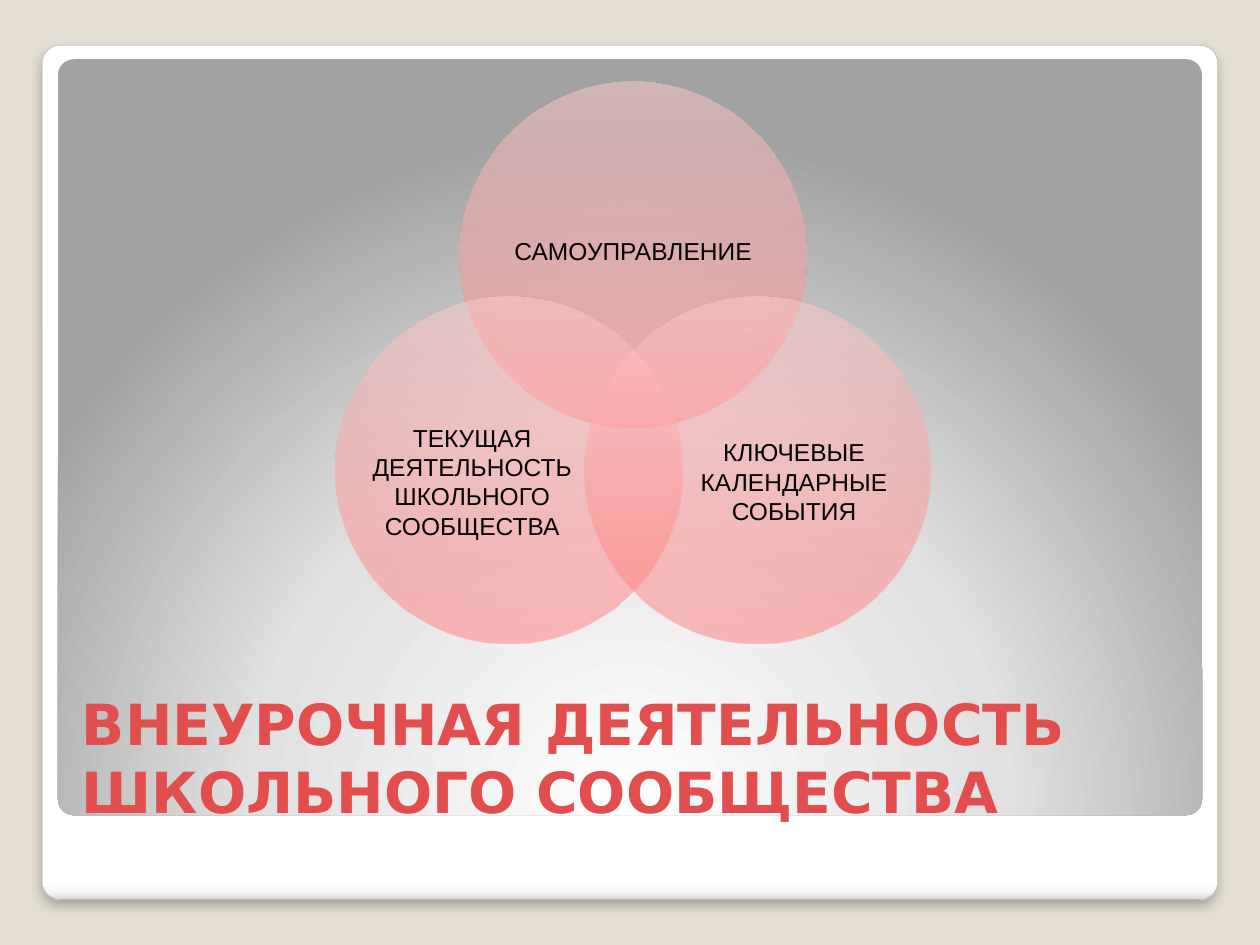
from dataclasses import dataclass
from math import cos, radians, sin

from pptx import Presentation
from pptx.dml.color import RGBColor
from pptx.enum.shapes import MSO_SHAPE as Preset
from pptx.enum.text import MSO_ANCHOR as Anchor, PP_ALIGN as Align
from pptx.oxml import parse_xml
from pptx.oxml.ns import nsdecls, qn
from pptx.util import Inches, Pt


@dataclass(frozen=True)
class Theme:
    backdrop: str = "E3DED1"
    frame_line: str = "A4A4A4"
    title_color: str = "E24D4D"
    label_color: str = "000000"
    title_font: str = "DejaVu Sans"
    label_font: str = "Arial"
    title_size: float = 32.4
    label_size: float = 14
    frame_stops: tuple = ((0, "FFFFFF"), (98, "FFFFFF"), (99, "F7F7F7"), (100, "DADADA"))
    stage_stops: tuple = ((0, "FFFFFF"), (55, "E1E1E1"), (100, "A2A2A2"))
    circle_stops: tuple = ((0, "FF7B7B"), (25, "FF8888"), (100, "FFCCCC"))


THEME = Theme()
WIDTH, HEIGHT = 10, 7.5
VENN_CENTER = (5.025, 3.16)
VENN_REACH = 1.14
DIAMETER = 2.75
TOPICS = (
    (-90, (0, -0.03), (2.02, 1.24), ("САМОУПРАВЛЕНИЕ",)),
    (30, (0.29, 0.09), (1.65, 1.51), ("КЛЮЧЕВЫЕ КАЛЕНДАРНЫЕ СОБЫТИЯ",)),
    (150, (-0.29, 0.09), (1.65, 1.51),
     ("ТЕКУЩАЯ ДЕЯТЕЛЬНОСТЬ ШКОЛЬНОГО", "СООБЩЕСТВА")),
)
LINEAR = '<a:lin ang="{}" scaled="0"/>'
RADIAL = ('<a:path path="circle"><a:fillToRect l="50000" t="175000" '
          'r="50000" b="-75000"/></a:path>')


def color(code):
    return RGBColor.from_string(code)


def centered(center, size):
    return [Inches(v) for v in (center[0] - size[0] / 2, center[1] - size[1] / 2, *size)]


def paint_gradient(shape, stops, direction, opacity=100):
    shape.fill.gradient()
    properties = shape._element.spPr
    stop_xml = "".join(
        f'<a:gs pos="{place * 1000}"><a:srgbClr val="{code}">'
        f'<a:alpha val="{opacity * 1000}"/></a:srgbClr></a:gs>'
        for place, code in stops)
    gradient = parse_xml(f'<a:gradFill {nsdecls("a")} rotWithShape="1">'
                         f'<a:gsLst>{stop_xml}</a:gsLst>{direction}</a:gradFill>')
    properties.replace(properties.find(qn("a:gradFill")), gradient)


def add_gradient_shape(slide, preset, box, stops, direction, opacity=100):
    shape = slide.shapes.add_shape(preset, *box)
    shape.shadow.inherit = False
    shape.line.fill.background()
    paint_gradient(shape, stops, direction, opacity)
    return shape


def add_panel(slide, center, size, stops, direction):
    panel = add_gradient_shape(slide, Preset.ROUNDED_RECTANGLE,
                               centered(center, size), stops, direction)
    panel.adjustments[0] = 0.021
    return panel


def add_frame(slide):
    frame = add_panel(slide, (WIDTH / 2, HEIGHT / 2), (9.33, 6.78),
                      THEME.frame_stops, LINEAR.format(5400000))
    frame.line.color.rgb = color(THEME.frame_line)
    frame.line.width = Pt(0.16)
    effects = frame._element.spPr.find(qn("a:effectLst"))
    effects.append(parse_xml(
        f'<a:outerShdw {nsdecls("a")} blurRad="{Pt(6)}" dist="{Pt(4)}" dir="5400000" '
        'algn="tl" rotWithShape="0"><a:srgbClr val="000000"><a:alpha val="25000"/>'
        '</a:srgbClr></a:outerShdw>'))


def write_run(paragraph, text, font, size, code, bold=False):
    run = paragraph.add_run()
    run.text = text
    run.font.name = font
    run.font.size = Pt(size)
    run.font.bold = bold
    run.font.color.rgb = color(code)


def set_title(slide, text):
    title = slide.shapes.title
    slide.shapes._spTree.append(title._element)
    title.left, title.top, title.width, title.height = map(Inches, (0.55, 5.45, 8.95, 1.15))
    title.text_frame.vertical_anchor = Anchor.BOTTOM
    heading = title.text_frame.paragraphs[0]
    heading.alignment = Align.LEFT
    write_run(heading, text, THEME.title_font, THEME.title_size, THEME.title_color, True)


def add_label(slide, center, size, lines):
    frame = slide.shapes.add_textbox(*centered(center, size)).text_frame
    frame.word_wrap = True
    frame.vertical_anchor = Anchor.MIDDLE
    frame.margin_left = frame.margin_top = frame.margin_right = frame.margin_bottom = 0
    for index, line in enumerate(lines):
        paragraph = frame.add_paragraph() if index else frame.paragraphs[0]
        paragraph.alignment = Align.CENTER
        write_run(paragraph, line, THEME.label_font, THEME.label_size, THEME.label_color)


def add_topic(slide, angle, offset, label_size, lines):
    turn = radians(angle)
    x = VENN_CENTER[0] + VENN_REACH * cos(turn)
    y = VENN_CENTER[1] + VENN_REACH * sin(turn)
    add_gradient_shape(slide, Preset.OVAL, centered((x, y), (DIAMETER, DIAMETER)),
                       THEME.circle_stops, LINEAR.format(16200000), 50)
    add_label(slide, (x + offset[0], y + offset[1]), label_size, lines)


def main():
    deck = Presentation()
    deck.slide_width, deck.slide_height = Inches(WIDTH), Inches(HEIGHT)
    slide = deck.slides.add_slide(deck.slide_layouts[5])
    slide.background.fill.solid()
    slide.background.fill.fore_color.rgb = color(THEME.backdrop)
    add_frame(slide)
    add_panel(slide, (WIDTH / 2, 3.47), (9.08, 6), THEME.stage_stops, RADIAL)
    set_title(slide, "ВНЕУРОЧНАЯ ДЕЯТЕЛЬНОСТЬ ШКОЛЬНОГО СООБЩЕСТВА")
    for topic in TOPICS:
        add_topic(slide, *topic)
    deck.save("out.pptx")


if __name__ == "__main__":
    main()
